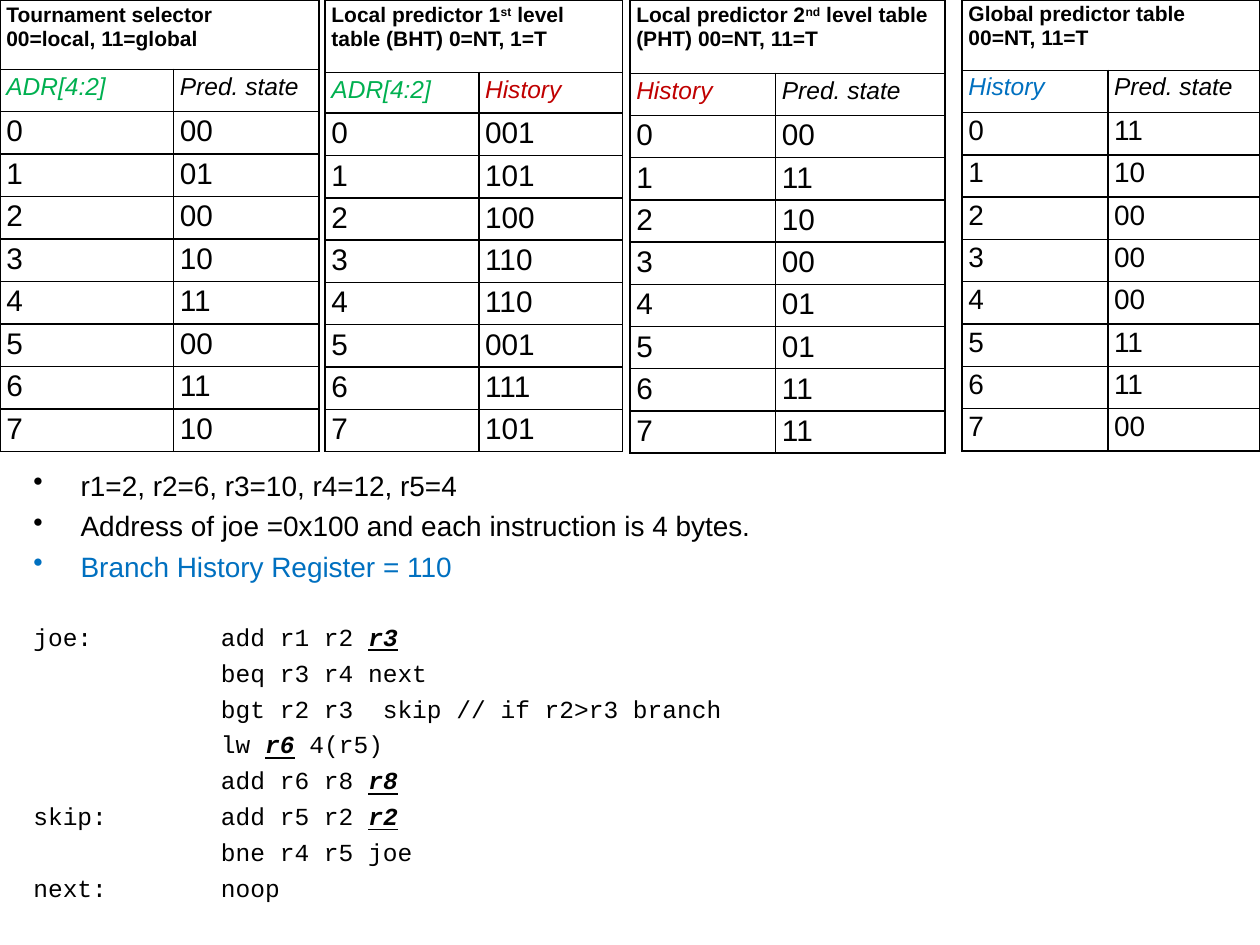
from lxml.etree import SubElement
from pptx import Presentation
from pptx.dml.color import RGBColor
from pptx.oxml.ns import qn
from pptx.util import Pt

BLACK, GREEN, RED, BLUE = "000000", "00B050", "C00000", "0070C0"


def style(paragraph, size, color, face="Arial", bold=False, italic=False):
    font = paragraph.font
    font.name, font.size, font.bold, font.italic = face, Pt(size), bold, italic
    font.color.rgb = RGBColor.from_string(color)


def add_marked_runs(paragraph, text):
    marked = []
    for index, part in enumerate(text.split("^")):
        if part:
            run = paragraph.add_run()
            run.text = part
            if index % 2:
                marked.append(run)
    return marked


prs = Presentation()
prs.slide_width, prs.slide_height = Pt(720), Pt(540)
slide = prs.slides.add_slide(prs.slide_layouts[6])

address, history = ("ADR[4:2]", GREEN), ("History", RED)
state, global_history = ("Pred. state", BLACK), ("History", BLUE)
predictors = [
    (0, (99.2, 83), (39.6, 24, 24.3), 17, 2,
     ["Tournament selector", "00=local, 11=global"], (address, state),
     "00 01 00 10 11 00 11 10"),
    (185.8, (87.8, 82), (41.4, 23.3, 24.2), 17, 2,
     ["Local predictor 1^st^ level table (BHT) 0=NT, 1=T"], (address, history),
     "001 101 100 110 110 001 111 101"),
    (360, (83.2, 96.8), (42, 24, 24.15), 17, 2,
     ["Local predictor 2^nd^ level table (PHT) 00=NT, 11=T"], (history, state),
     "00 11 10 00 01 01 11 11"),
    (549.8, (83.2, 87), (40.3, 24, 24.2), 16, 1.6,
     ["Global predictor table", "00=NT, 11=T"], (global_history, state),
     "11 10 00 00 00 11 11 00"),
]

for left, widths, (title_height, label_height, entry_height), size, inset, title, labels, entries in predictors:
    heights = [title_height, label_height] + [entry_height] * 8
    table = slide.shapes.add_table(
        10, 2, Pt(left), Pt(0), Pt(sum(widths)), Pt(sum(heights))).table
    table.first_row = table.horz_banding = False
    for column, width in zip(table.columns, widths):
        column.width = Pt(width)
    for row, height in zip(table.rows, heights):
        row.height = Pt(height)

    for cell in table.iter_cells():
        cell.margin_left = cell.margin_right = Pt(3.6)
        cell.margin_top = cell.margin_bottom = Pt(inset)
        properties = cell._tc.get_or_add_tcPr()
        for side in ("a:lnL", "a:lnR", "a:lnT", "a:lnB"):
            border = SubElement(properties, qn(side), w=str(Pt(1)))
            fill = SubElement(border, qn("a:solidFill"))
            SubElement(fill, qn("a:srgbClr"), val=BLACK)
        cell.fill.background()

    heading = table.cell(0, 0)
    heading.merge(table.cell(0, 1))
    for index, line in enumerate(title):
        frame = heading.text_frame
        paragraph = frame.add_paragraph() if index else frame.paragraphs[0]
        style(paragraph, 12, BLACK, bold=True)
        for ordinal in add_marked_runs(paragraph, line):
            ordinal.font._element.set("baseline", "30000")

    for column, (label, color) in enumerate(labels):
        cell = table.cell(1, column)
        cell.text = label
        style(cell.text_frame.paragraphs[0], 14, color, italic=True)

    for number, entry in enumerate(entries.split()):
        for column, value in enumerate((str(number), entry)):
            cell = table.cell(number + 2, column)
            cell.text = value
            style(cell.text_frame.paragraphs[0], size, BLACK)

facts = [
    ("r1=2, r2=6, r3=10, r4=12, r5=4", BLACK),
    ("Address of joe =0x100 and each instruction is 4 bytes.", BLACK),
    ("Branch History Register = 110", BLUE),
]
program = [
    ("joe:", "add r1 r2 ^r3^"),
    ("", "beq r3 r4 next"),
    ("", "bgt r2 r3  skip // if r2>r3 branch"),
    ("", "lw ^r6^ 4(r5)"),
    ("", "add r6 r8 ^r8^"),
    ("skip:", "add r5 r2 ^r2^"),
    ("", "bne r4 r5 joe"),
    ("next:", "noop"),
]

body = slide.shapes.add_textbox(Pt(12), Pt(264.2), Pt(444), Pt(270)).text_frame
body.word_wrap = True
for index, (fact, color) in enumerate(facts):
    paragraph = body.add_paragraph() if index else body.paragraphs[0]
    paragraph.text = fact
    paragraph.space_before = Pt(3.9)
    style(paragraph, 16, color)
    properties = paragraph._p.get_or_add_pPr()
    properties.set("marL", str(Pt(27)))
    properties.set("indent", str(Pt(-27)))
    bullet = properties.makeelement(qn("a:buChar"), {"char": "•"})
    properties.find(qn("a:defRPr")).addprevious(bullet)

for index, (label, instruction) in enumerate(program):
    paragraph = body.add_paragraph()
    paragraph.space_before = Pt(3.7 if index else 22.1)
    style(paragraph, 14, BLACK, face="Courier New")
    properties = paragraph._p.get_or_add_pPr()
    properties.set("marL", str(Pt(107.2)))
    properties.set("indent", str(Pt(-107.2)))
    for register in add_marked_runs(paragraph, f"{label}\t{instruction}"):
        register.font.bold = register.font.italic = register.font.underline = True

prs.save("out.pptx")
